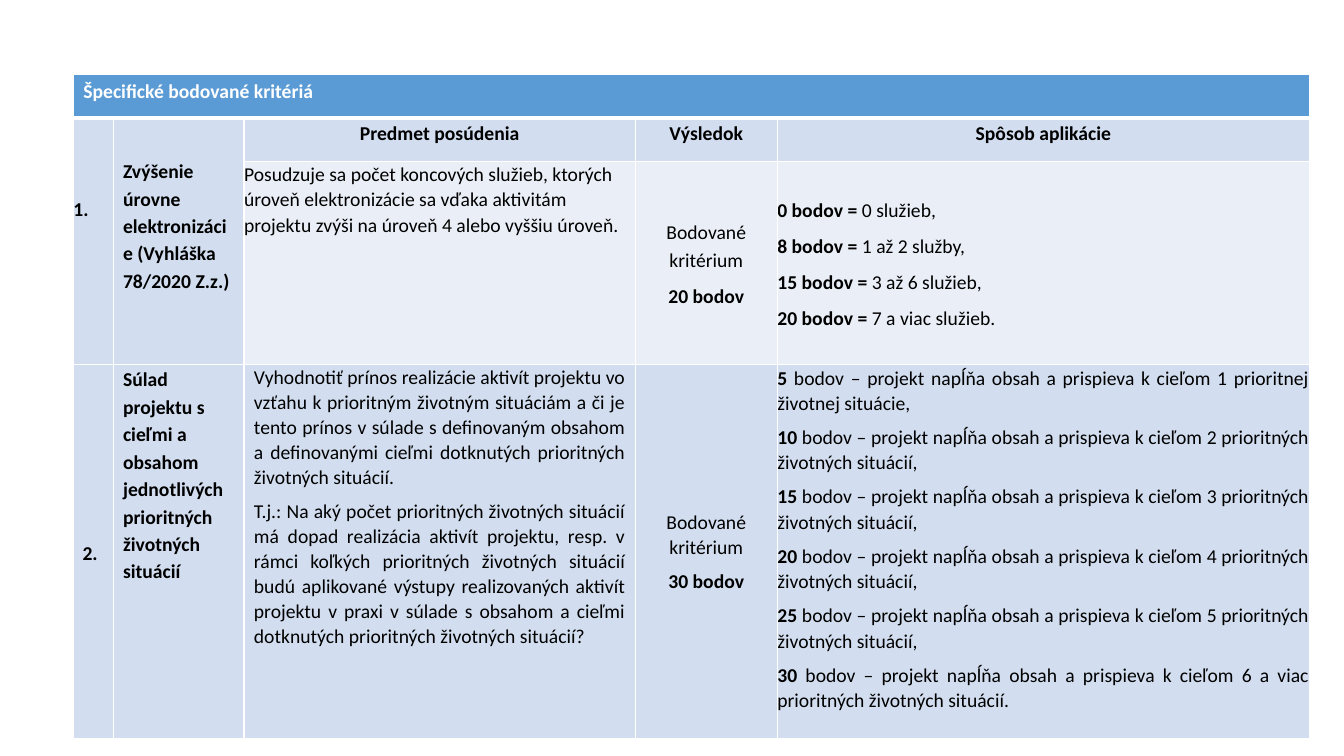
from lxml.etree import SubElement
from pptx import Presentation
from pptx.dml.color import RGBColor
from pptx.enum.text import MSO_ANCHOR as Anchor, PP_ALIGN as Align
from pptx.oxml.ns import qn
from pptx.util import Cm, Pt

WHITE = RGBColor(0xFF, 0xFF, 0xFF)
BLACK = RGBColor(0x00, 0x00, 0x00)
HEADER_BLUE = RGBColor(0x5B, 0x9B, 0xD5)
BAND_DARK = RGBColor(0xD2, 0xDE, 0xEF)
BAND_LIGHT = RGBColor(0xEA, 0xEF, 0xF7)

COLUMN_WIDTHS = [1.02, 3.28, 9.86, 3.58, 13.41]
ROW_HEIGHTS = [1.09, 1.09, 5.13, 9.42]
INDENT = 0.23

TITLE = "Špecifické bodované kritériá"
HEADINGS = ["Predmet posúdenia", "Výsledok", "Spôsob aplikácie"]
SERVICES_NAME = "Zvýšenie úrovne elektronizácie (Vyhláška 78/2020 Z.z.)"
SERVICES_SUBJECT = (
    "Posudzuje sa počet koncových služieb, ktorých úroveň elektronizácie sa vďaka "
    "aktivitám projektu zvýši na úroveň 4 alebo vyššiu úroveň."
)
SERVICES_POINTS = [
    ("0 bodov = ", "0 služieb,"),
    ("8 bodov = ", "1 až 2 služby,"),
    ("15 bodov = ", "3 až 6 služieb,"),
    ("20 bodov = ", "7 a viac služieb."),
]
GOALS_NAME = "Súlad projektu s cieľmi a obsahom jednotlivých prioritných životných situácií"
GOALS_SUBJECT = [
    "Vyhodnotiť prínos realizácie aktivít projektu vo vzťahu k prioritným životným "
    "situáciám a či je tento prínos v súlade s definovaným obsahom a definovanými "
    "cieľmi dotknutých prioritných životných situácií.",
    "T.j.: Na aký počet prioritných životných situácií má dopad realizácia aktivít "
    "projektu, resp. v rámci koľkých prioritných životných situácií budú aplikované "
    "výstupy realizovaných aktivít projektu v praxi v súlade s obsahom a cieľmi "
    "dotknutých prioritných životných situácií?",
]
GOALS_COUNTS = [
    "1 prioritnej životnej situácie,",
    *[f"{count} prioritných životných situácií," for count in range(2, 6)],
    "6 a viac prioritných životných situácií.",
]
GOALS_POINTS = [
    (str(5 * number), f" bodov – projekt napĺňa obsah a prispieva k cieľom {count}")
    for number, count in enumerate(GOALS_COUNTS, start=1)
]


def style_cell(cell, fill, bottom_width=1):
    """Give a cell white borders and a solid fill."""
    properties = cell._tc.get_or_add_tcPr()
    for side, width in (("L", 1), ("R", 1), ("T", 1), ("B", bottom_width)):
        line = SubElement(properties, qn(f"a:ln{side}"), w=str(Pt(width)))
        solid = SubElement(line, qn("a:solidFill"))
        SubElement(solid, qn("a:srgbClr"), val=str(WHITE))
    cell.fill.solid()
    cell.fill.fore_color.rgb = fill


def write_cell(cell, lines, align=Align.LEFT, spacing=1.15, anchor=Anchor.TOP,
               side=0, top=0, color=BLACK):
    """Write lines of (bold, regular) text into a cell."""
    cell.vertical_anchor = anchor
    cell.margin_left = cell.margin_right = Cm(side)
    cell.margin_top, cell.margin_bottom = Cm(top), 0
    for index, line in enumerate(lines):
        frame = cell.text_frame
        paragraph = frame.add_paragraph() if index else frame.paragraphs[0]
        paragraph.alignment = align
        paragraph.line_spacing = spacing
        paragraph.space_before = Pt(6)
        for text, bold in zip(line, (True, False)):
            if text:
                run = paragraph.add_run()
                run.text = text
                run.font.name, run.font.size = "Calibri", Pt(14)
                run.font.bold = bold
                run.font.color.rgb = color


def fill_header(table):
    """Write the title row and the column headings."""
    write_cell(table.cell(0, 0), [(TITLE, "")], spacing=1, side=0.25, top=0.13, color=WHITE)
    for column, heading in enumerate(HEADINGS, start=2):
        write_cell(table.cell(1, column), [(heading, "")], Align.CENTER)


def fill_services(table):
    """Write the criterion on electronic services."""
    write_cell(table.cell(1, 0), [("1.", "")], top=1.93)
    write_cell(table.cell(1, 1), [(SERVICES_NAME, "")], side=INDENT, top=0.97)
    write_cell(table.cell(2, 2), [("", SERVICES_SUBJECT)], spacing=1.07)
    write_cell(table.cell(2, 3), [("", "Bodované kritérium"), ("20 bodov", "")],
               Align.CENTER, anchor=Anchor.MIDDLE)
    write_cell(table.cell(2, 4), SERVICES_POINTS, Align.JUSTIFY, anchor=Anchor.MIDDLE)


def fill_goals(table):
    """Write the criterion on priority life situations."""
    write_cell(table.cell(3, 0), [("2.", "")], side=INDENT, anchor=Anchor.MIDDLE)
    write_cell(table.cell(3, 1), [(GOALS_NAME, "")], side=INDENT)
    write_cell(table.cell(3, 2), [("", text) for text in GOALS_SUBJECT],
               Align.JUSTIFY, 1.05, side=0.25)
    write_cell(table.cell(3, 3), [("", "Bodované kritérium"), ("30 bodov", "")],
               Align.CENTER, 1.05, Anchor.MIDDLE)
    write_cell(table.cell(3, 4), GOALS_POINTS, Align.JUSTIFY, 1.07)


def add_criteria_table(slide, left, top):
    """Place the criteria table with its top left corner at the given point."""
    shape = slide.shapes.add_table(
        len(ROW_HEIGHTS), len(COLUMN_WIDTHS), Cm(left), Cm(top),
        Cm(sum(COLUMN_WIDTHS)), Cm(sum(ROW_HEIGHTS)))
    table = shape.table
    table.first_row = table.horz_banding = False
    for column, width in zip(table.columns, COLUMN_WIDTHS):
        column.width = Cm(width)
    for index, (row, height) in enumerate(zip(table.rows, ROW_HEIGHTS)):
        row.height = Cm(height)
        for position, cell in enumerate(row.cells):
            if index == 0:
                style_cell(cell, HEADER_BLUE, bottom_width=3)
            else:
                light = index == 2 and position >= 2
                style_cell(cell, BAND_LIGHT if light else BAND_DARK)
    table.cell(0, 0).merge(table.cell(0, 4))
    for column in range(2):
        table.cell(1, column).merge(table.cell(2, column))
    fill_header(table)
    fill_services(table)
    fill_goals(table)


def main():
    """Build and save the presentation."""
    presentation = Presentation()
    presentation.slide_width, presentation.slide_height = Cm(33.87), Cm(19.05)
    slide = presentation.slides.add_slide(presentation.slide_layouts[6])
    add_criteria_table(slide, 1.85, 1.88)
    presentation.save("out.pptx")


if __name__ == "__main__":
    main()
